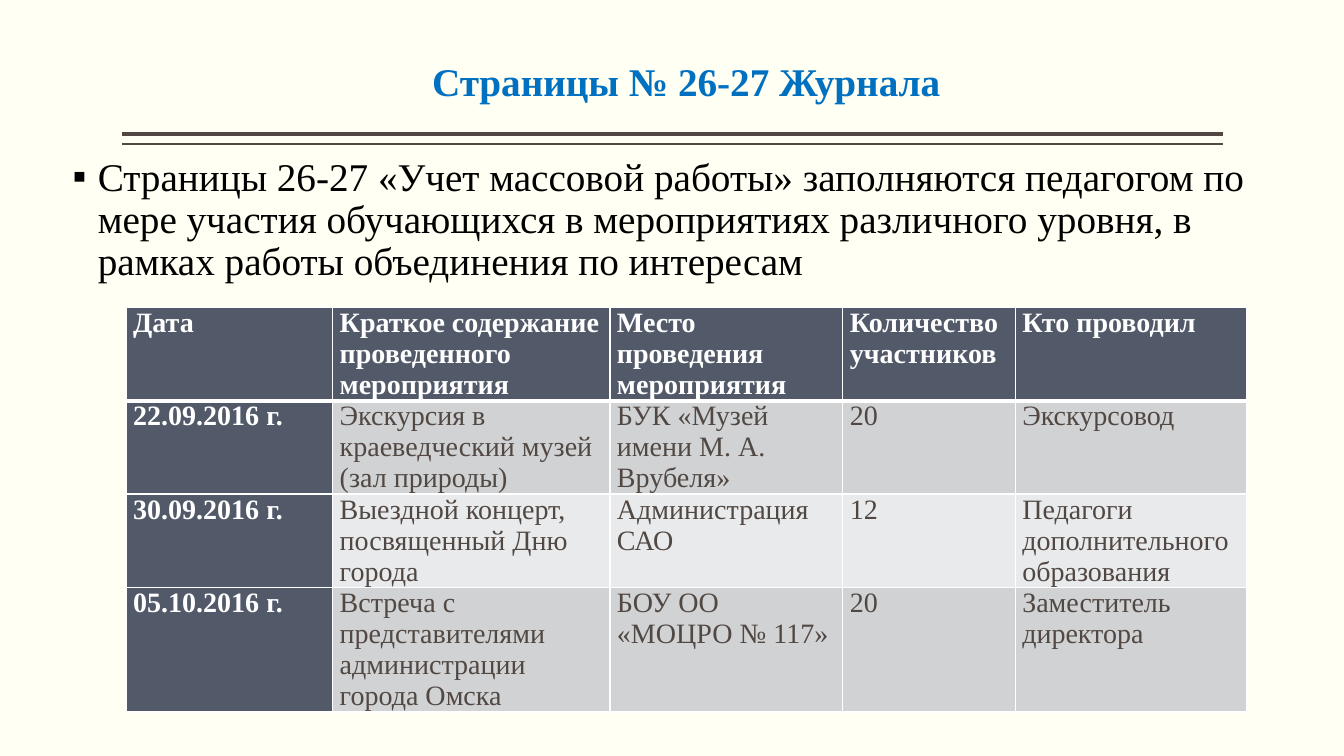
from dataclasses import dataclass

from lxml import etree
from pptx import Presentation
from pptx import util as u
from pptx.dml.color import RGBColor
from pptx.enum import shapes, text
from pptx.oxml.ns import qn


@dataclass(frozen=True)
class Theme:
    font: str = "Times New Roman"
    background: str = "FFFFF3"
    title: str = "0070C0"
    body: str = "000000"
    rule: str = "514843"
    cell_text: str = "514843"
    header_text: str = "FFFFFF"
    header_fill: str = "525A6A"
    bands: tuple = ("D1D2D4", "E9EAEB")
    border: str = "FFFFFF"
    large: int = 28
    small: int = 20


THEME = Theme()

TITLE = "Страницы № 26-27 Журнала"
INSTRUCTION = (
    "Страницы 26-27 «Учет массовой работы» заполняются педагогом по мере участия "
    "обучающихся в мероприятиях различного уровня, в рамках работы объединения по интересам"
)
EVENTS = [
    ("Дата", "Краткое содержание проведенного мероприятия",
     "Место проведения мероприятия", "Количество участников", "Кто проводил"),
    ("22.09.2016 г.", "Экскурсия в краеведческий музей (зал природы)",
     "БУК «Музей имени М. А. Врубеля»", "20", "Экскурсовод"),
    ("30.09.2016 г.", "Выездной концерт, посвященный Дню города",
     "Администрация САО", "12", "Педагоги дополнительного образования"),
    ("05.10.2016 г.", "Встреча с представителями администрации города Омска",
     "БОУ ОО «МОЦРО № 117»", "20", "Заместитель директора"),
]
COLUMN_WIDTHS = (2.05, 2.75, 2.31, 1.71, 2.29)
ROW_HEIGHTS = (0.92, 0.92, 0.93, 1.23)


def rgb(value):
    return RGBColor.from_string(value)


def write(frame, content, size, color, bold=False):
    """Fill a text frame with one formatted paragraph and return the paragraph."""
    frame.text = content
    paragraph = frame.paragraphs[0]
    font = paragraph.runs[0].font
    font.name = THEME.font
    font.size = u.Pt(size)
    font.bold = bold
    font.color.rgb = rgb(color)
    return paragraph


def fill_placeholder(placeholder, box, content, color, anchor, bold=False):
    placeholder.left, placeholder.top, placeholder.width, placeholder.height = map(u.Inches, box)
    frame = placeholder.text_frame
    frame.margin_left = frame.margin_right = 0
    frame.margin_top = frame.margin_bottom = u.Inches(0.05)
    frame.word_wrap = True
    frame.auto_size = text.MSO_AUTO_SIZE.NONE
    frame.vertical_anchor = anchor
    paragraph = write(frame, content, THEME.large, color, bold)
    paragraph.line_spacing = 0.9
    return paragraph


def add_bullet(paragraph, symbol):
    properties = paragraph._p.get_or_add_pPr()
    indent = u.Inches(0.25)
    properties.set("marL", str(indent))
    properties.set("indent", str(-indent))
    etree.SubElement(properties, qn("a:buFont"), typeface=THEME.font)
    etree.SubElement(properties, qn("a:buChar"), char=symbol)


def add_rule(slide, top, width):
    rule = slide.shapes.add_connector(
        shapes.MSO_CONNECTOR.STRAIGHT,
        u.Inches(1.21), u.Inches(top), u.Inches(12.13), u.Inches(top))
    rule.line.color.rgb = rgb(THEME.rule)
    rule.line.width = u.Pt(width)
    etree.SubElement(rule._element.spPr, qn("a:effectLst"))


def add_border(cell, side, width):
    line = etree.SubElement(cell._tc.get_or_add_tcPr(), qn(f"a:ln{side}"), w=str(u.Pt(width)))
    fill = etree.SubElement(line, qn("a:solidFill"))
    etree.SubElement(fill, qn("a:srgbClr"), val=THEME.border)


def format_cell(cell, content, row, column):
    heading = row == 0 or column == 0
    cell.margin_left = cell.margin_right = u.Inches(0.07)
    cell.margin_top = cell.margin_bottom = 0
    for side in "LRTB":
        under_header = (row, side) in ((0, "B"), (1, "T"))
        add_border(cell, side, 3 if under_header else 1)
    cell.fill.solid()
    cell.fill.fore_color.rgb = rgb(THEME.header_fill if heading else THEME.bands[(row - 1) % 2])
    color = THEME.header_text if heading else THEME.cell_text
    paragraph = write(cell.text_frame, content, THEME.small, color, heading)
    paragraph.space_after = u.Pt(12)


def add_events_table(slide):
    table = slide.shapes.add_table(
        len(EVENTS), len(COLUMN_WIDTHS), u.Inches(1.25), u.Inches(3.05),
        u.Inches(sum(COLUMN_WIDTHS)), u.Inches(sum(ROW_HEIGHTS))).table
    for column, width in zip(table.columns, COLUMN_WIDTHS):
        column.width = u.Inches(width)
    for row, height in zip(table.rows, ROW_HEIGHTS):
        row.height = u.Inches(height)
    for row, event in enumerate(EVENTS):
        for column, content in enumerate(event):
            format_cell(table.cell(row, column), content, row, column)


def main():
    deck = Presentation()
    deck.slide_width, deck.slide_height = u.Inches(13.33), u.Inches(7.5)
    slide = deck.slides.add_slide(deck.slide_layouts[1])
    slide.background.fill.solid()
    slide.background.fill.fore_color.rgb = rgb(THEME.background)

    add_rule(slide, 1.33, 3)
    add_rule(slide, 1.43, 1)
    title = fill_placeholder(slide.shapes.title, (0.72, 0.35, 12.17, 0.74), TITLE,
                             THEME.title, text.MSO_ANCHOR.BOTTOM, bold=True)
    title.alignment = text.PP_ALIGN.CENTER
    instruction = fill_placeholder(slide.placeholders[1], (0.72, 1.51, 12.17, 6.29), INSTRUCTION,
                                   THEME.body, text.MSO_ANCHOR.TOP)
    instruction.space_before = u.Pt(18)
    add_bullet(instruction, "▪")
    add_events_table(slide)
    deck.save("out.pptx")


if __name__ == "__main__":
    main()
